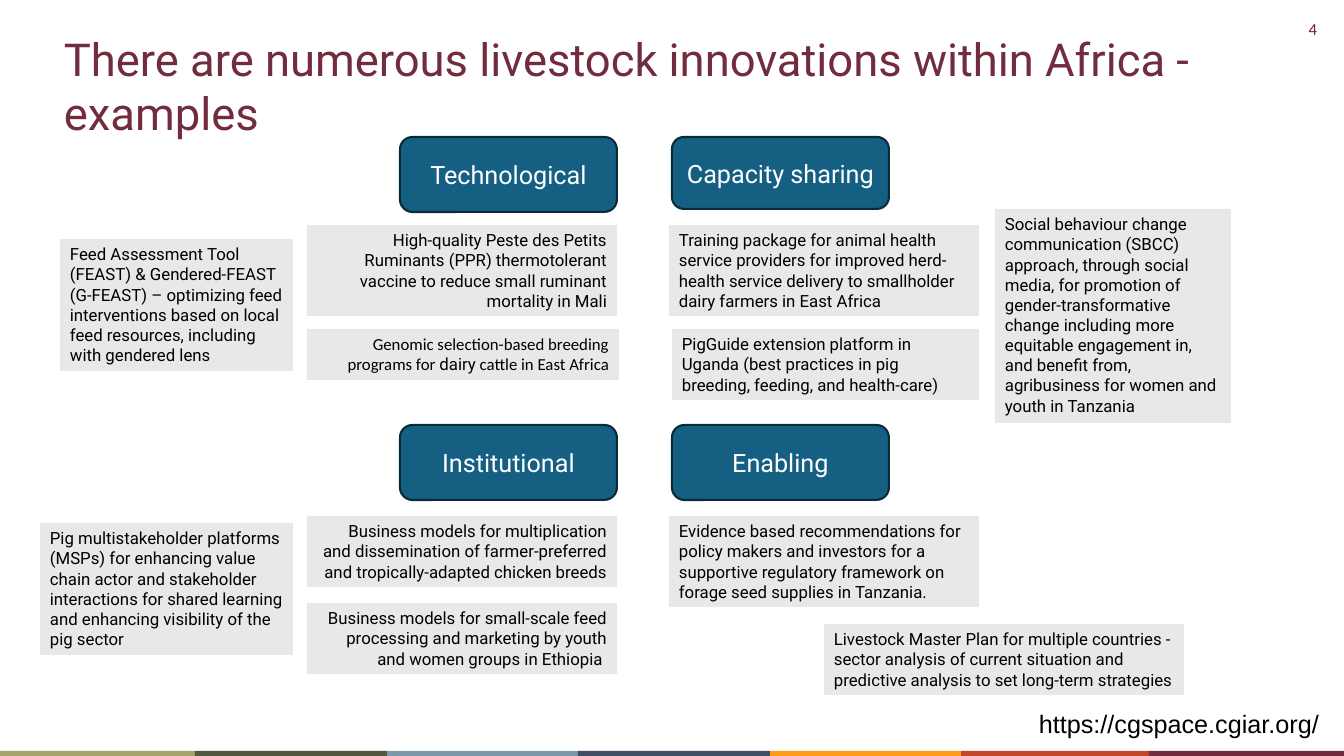
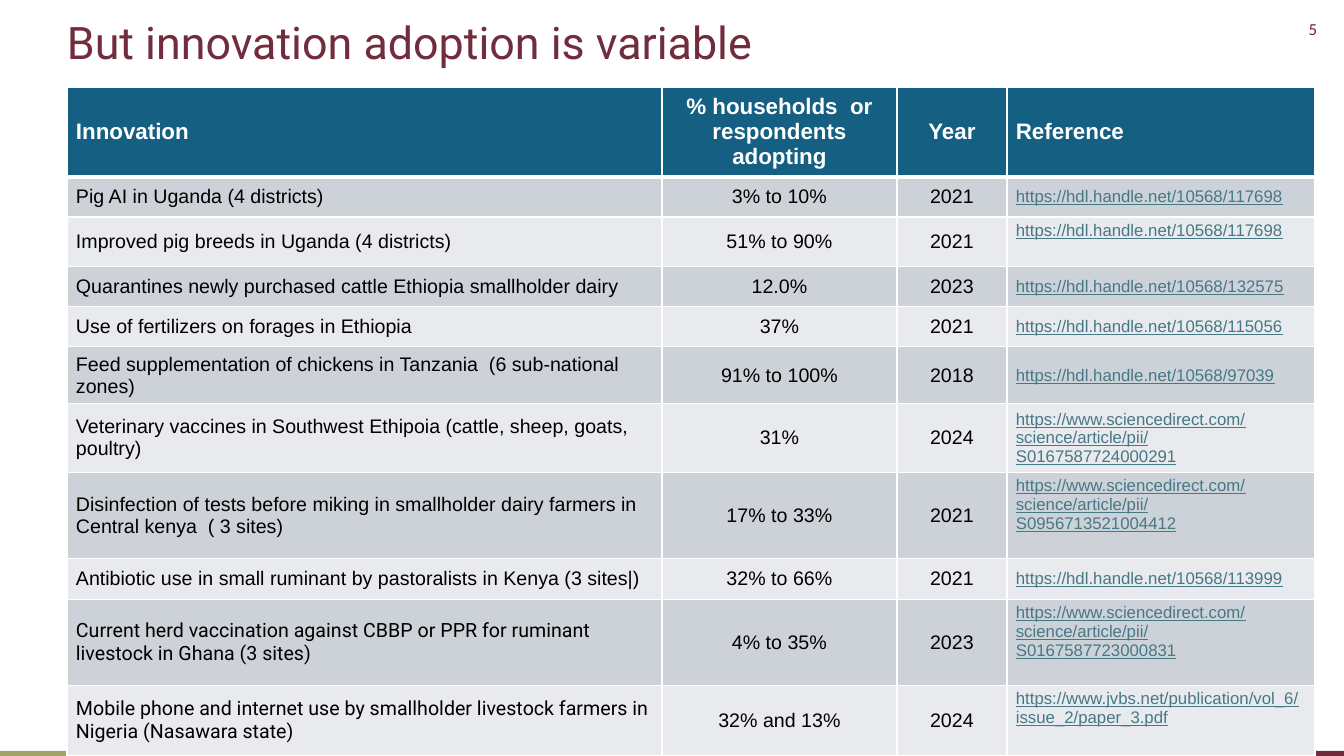
from dataclasses import dataclass
from typing import Any, NamedTuple

import pptx
import pptx.dml.color
import pptx.enum.shapes
import pptx.enum.text
import pptx.oxml
import pptx.oxml.ns
import pptx.util
from lxml import etree

RGB = pptx.dml.color.RGBColor
ALIGN = pptx.enum.text.PP_ALIGN
ANCHOR = pptx.enum.text.MSO_ANCHOR
SHAPE = pptx.enum.shapes.MSO_SHAPE
Pt = pptx.util.Pt

WIDTH, HEIGHT = 1344, 756
SCALE = 12192000 / WIDTH

WHITE = RGB(0xFF, 0xFF, 0xFF)
BLACK = RGB(0x00, 0x00, 0x00)
WINE = RGB(0x71, 0x2C, 0x3D)
RED = RGB(0x76, 0x21, 0x23)
TEAL = RGB(0x15, 0x60, 0x82)
NAVY = RGB(0x09, 0x2A, 0x39)
GREY = RGB(0xE8, 0xE8, 0xE8)
DARK = RGB(0xCC, 0xD2, 0xD8)
PALE = RGB(0xE8, 0xEA, 0xED)
LINK = RGB(0x46, 0x78, 0x86)


class Band(NamedTuple):
    right: int
    fill: RGB


BANDS = (
    Band(195, RGB(0xA3, 0xA4, 0x67)),
    Band(387, RGB(0x53, 0x59, 0x3E)),
    Band(578, RGB(0x7C, 0x98, 0xAB)),
    Band(770, RGB(0x40, 0x4E, 0x65)),
    Band(961, RGB(0xFF, 0x9E, 0x16)),
    Band(1149, RGB(0xC3, 0x46, 0x28)),
    Band(WIDTH, WINE),
)


class Box(NamedTuple):
    left: int
    top: int
    width: int
    height: int

    def emu(self) -> tuple[int, ...]:
        return tuple(px(n) for n in self)


@dataclass(frozen=True)
class Style:
    size: float
    color: RGB = BLACK
    font: str = "Roboto"
    align: Any = ALIGN.LEFT
    bold: bool = False
    under: bool = False


class Part(NamedTuple):
    text: str
    font: str


@dataclass(frozen=True)
class Head:
    box: Box
    text: str


@dataclass(frozen=True)
class Note:
    box: Box
    text: str | tuple[Part, ...]
    align: Any = ALIGN.LEFT


@dataclass(frozen=True)
class Row:
    height: int
    name: str
    share: str
    year: str
    link: str
    font: str = "Arial"
    high: bool = False  # the link sits at the top of its cell


HEADS = (
    Head(Box(400, 137, 217, 75), "Technological"),
    Head(Box(400, 425, 217, 75), "Institutional"),
    Head(Box(672, 137, 217, 72), "Capacity sharing"),
    Head(Box(672, 425, 217, 75), "Enabling"),
)

NOTES = (
    Note(Box(307, 516, 310, 71),
         "Business models for multiplication and dissemination of "
         "farmer-preferred and tropically-adapted chicken breeds", ALIGN.RIGHT),
    Note(Box(669, 225, 310, 91),
         "Training package for animal health service providers for improved "
         "herd-health service delivery to smallholder dairy farmers in East Africa"),
    Note(Box(672, 329, 307, 71),
         "PigGuide extension platform in Uganda (best practices in pig "
         "breeding, feeding, and health-care)"),
    Note(Box(669, 516, 310, 91),
         "Evidence based recommendations for policy makers and investors for a "
         "supportive regulatory framework on forage seed supplies in Tanzania."),
    Note(Box(307, 225, 310, 91),
         "High-quality Peste des Petits Ruminants (PPR) thermotolerant vaccine "
         "to reduce small ruminant mortality in Mali", ALIGN.RIGHT),
    Note(Box(307, 329, 312, 51),
         (Part("Genomic selection-based breeding programs for ", "Calibri"),
          Part("dairy", "Roboto"),
          Part(" cattle in East Africa", "Calibri")), ALIGN.RIGHT),
    Note(Box(307, 603, 310, 71),
         "Business models for small-scale feed processing and marketing by "
         "youth and women groups in Ethiopia ", ALIGN.RIGHT),
    Note(Box(824, 624, 360, 71),
         "Livestock Master Plan for multiple countries - sector analysis of "
         "current situation and predictive analysis to set long-term strategies"),
    Note(Box(60, 239, 233, 132),
         "Feed Assessment Tool (FEAST) & Gendered-FEAST (G-FEAST) – optimizing "
         "feed interventions based on local feed resources, including with "
         "gendered lens"),
    Note(Box(995, 209, 236, 214),
         "Social behaviour change communication (SBCC) approach, through social "
         "media, for promotion of gender-transformative change including more "
         "equitable engagement in, and benefit from, agribusiness for women and "
         "youth in Tanzania"),
    Note(Box(40, 523, 253, 132),
         "Pig multistakeholder platforms (MSPs) for enhancing value chain actor "
         "and stakeholder interactions for shared learning and enhancing "
         "visibility of the pig sector"),
)

HANDLE = "https://hdl.handle.net/10568/"
PAPER = "https://www.sciencedirect.com/science/article/pii/"
COLS = (595, 235, 110, 308)
TITLES = ("Innovation", "% households  or respondents adopting", "Year", "Reference")
ALIGNS = (ALIGN.LEFT, ALIGN.CENTER, ALIGN.CENTER, ALIGN.LEFT)
TOP = 90

ROWS = (
    Row(40, "Pig AI in Uganda (4 districts)", "3% to 10%", "2021", HANDLE + "117698"),
    Row(50, "Improved pig breeds in Uganda (4 districts)", "51% to 90%", "2021",
        HANDLE + "117698", high=True),
    Row(40, "Quarantines newly purchased cattle Ethiopia smallholder dairy",
        "12.0%", "2023", HANDLE + "132575"),
    Row(40, "Use of fertilizers on forages in Ethiopia", "37%", "2021",
        HANDLE + "115056"),
    Row(57, "Feed supplementation of chickens in Tanzania  (6 sub-national zones)",
        "91% to 100%", "2018", HANDLE + "97039"),
    Row(66, "Veterinary vaccines in Southwest Ethipoia (cattle, sheep, goats, poultry)",
        "31%", "2024", PAPER + "S0167587724000291"),
    Row(86, "Disinfection of tests before miking in smallholder dairy farmers in "
        "Central kenya  ( 3 sites)", "17% to 33%", "2021",
        PAPER + "S0956713521004412", high=True),
    Row(41, "Antibiotic use in small ruminant by pastoralists in Kenya (3 sites|)",
        "32% to 66%", "2021", HANDLE + "113999"),
    Row(86, "Current herd vaccination against CBBP or PPR for ruminant livestock in "
        "Ghana (3 sites)", "4% to 35%", "2023",
        PAPER + "S0167587723000831", "Roboto", True),
    Row(70, "Mobile phone and internet use by smallholder livestock farmers in "
        "Nigeria (Nasawara state)", "32% and 13%", "2024",
        "https://www.jvbs.net/publication/vol_6/issue_2/paper_3.pdf", "Roboto", True),
)


def px(count: int) -> int:
    return round(count * SCALE)


def write(frame: Any, text: str | tuple[Part, ...], style: Style) -> None:
    para = frame.paragraphs[0]
    para.alignment = style.align
    font = para.font
    font.size = Pt(style.size)
    font.bold = style.bold
    font.underline = style.under
    font.color.rgb = style.color
    if isinstance(text, str):
        font.name = style.font
        para.add_run().text = text
        return
    for part in text:
        run = para.add_run()
        run.text = part.text
        run.font.name = part.font


def label(slide: Any, box: Box, text: str, style: Style) -> None:
    frame = slide.shapes.add_textbox(*box.emu()).text_frame
    frame.word_wrap = True
    write(frame, text, style)


def block(slide: Any, box: Box, fill: RGB, kind: Any = SHAPE.RECTANGLE) -> Any:
    shape = slide.shapes.add_shape(kind, *box.emu())
    shape.shadow.inherit = False
    shape.fill.solid()
    shape.fill.fore_color.rgb = fill
    shape.line.fill.background()
    return shape


def start(deck: Any, page: int, title: str, box: Box, size: float) -> Any:
    """Add a slide with its number, colour bands and title."""
    slide = deck.slides.add_slide(deck.slide_layouts[6])
    label(slide, Box(1256, 14, 71, 30), str(page),
          Style(12, RED, "Calibri", ALIGN.RIGHT))
    left = 0
    for band in BANDS:
        block(slide, Box(left, 751, band.right - left, HEIGHT - 751), band.fill)
        left = band.right
    label(slide, box, title, Style(size, WINE))
    return slide


def chart(deck: Any) -> None:
    """Build the slide of innovation examples."""
    slide = start(deck, 4,
                  "There are numerous livestock innovations within Africa - examples",
                  Box(54, 26, 1267, 75), 32.4)
    for head in HEADS:
        shape = block(slide, head.box, TEAL, SHAPE.ROUNDED_RECTANGLE)
        shape.line.color.rgb = NAVY
        shape.line.width = Pt(1.5)
        shape.text_frame.word_wrap = True
        shape.text_frame.vertical_anchor = ANCHOR.MIDDLE
        write(shape.text_frame, head.text, Style(18, WHITE, align=ALIGN.CENTER))
    for note in NOTES:
        frame = block(slide, note.box, GREY).text_frame
        frame.word_wrap = True
        frame.vertical_anchor = ANCHOR.TOP
        write(frame, note.text, Style(12, align=note.align))
    label(slide, Box(1029, 703, 310, 40), "https://cgspace.cgiar.org/",
          Style(18, font="Arial"))


def edge(cell: Any, top: int, bottom: int) -> None:
    """Draw white cell borders, with widths in points."""
    props = cell._tc.get_or_add_tcPr()
    qn = pptx.oxml.ns.qn
    for side, width in (("L", 1), ("R", 1), ("T", top), ("B", bottom)):
        line = etree.SubElement(props, qn(f"a:ln{side}"), w=str(Pt(width)))
        fill = etree.SubElement(line, qn("a:solidFill"))
        etree.SubElement(fill, qn("a:srgbClr"), val=str(WHITE))


def paint(cell: Any, text: str, style: Style, fill: RGB,
          top: int = 1, bottom: int = 1, high: bool = False) -> None:
    edge(cell, top, bottom)
    cell.fill.solid()
    cell.fill.fore_color.rgb = fill
    cell.margin_left = cell.margin_right = px(9)
    cell.margin_top = cell.margin_bottom = px(4)
    cell.vertical_anchor = ANCHOR.TOP if high else ANCHOR.MIDDLE
    write(cell.text_frame, text, style)


def grid(deck: Any) -> None:
    """Build the slide with the adoption table."""
    slide = start(deck, 5, "But innovation adoption is variable",
                  Box(57, 10, 1267, 75), 32)
    tall = (TOP, *(row.height for row in ROWS))
    box = Box(67, 87, sum(COLS), sum(tall))
    table = slide.shapes.add_table(len(tall), len(COLS), *box.emu()).table
    table.first_row = table.horz_banding = False
    for col, width in zip(table.columns, COLS):
        col.width = px(width)
    for line, height in zip(table.rows, tall):
        line.height = px(height)
    for col, (text, align) in enumerate(zip(TITLES, ALIGNS)):
        paint(table.cell(0, col), text, Style(16, WHITE, "Arial", align, True),
              TEAL, bottom=3)
    for num, row in enumerate(ROWS, 1):
        body = Style(14, font="Arial", align=ALIGN.CENTER)
        items = (
            (row.name, Style(14, font=row.font), False),
            (row.share, body, False),
            (row.year, body, False),
            (row.link, Style(12, LINK, "Arial", under=True), row.high),
        )
        for col, (text, style, high) in enumerate(items):
            paint(table.cell(num, col), text, style, DARK if num % 2 else PALE,
                  top=3 if num == 1 else 1, high=high)


def main() -> None:
    deck = pptx.Presentation()
    deck.slide_width, deck.slide_height = px(WIDTH), px(HEIGHT)
    chart(deck)
    grid(deck)
    deck.save("out.pptx")


if __name__ == "__main__":
    main()
